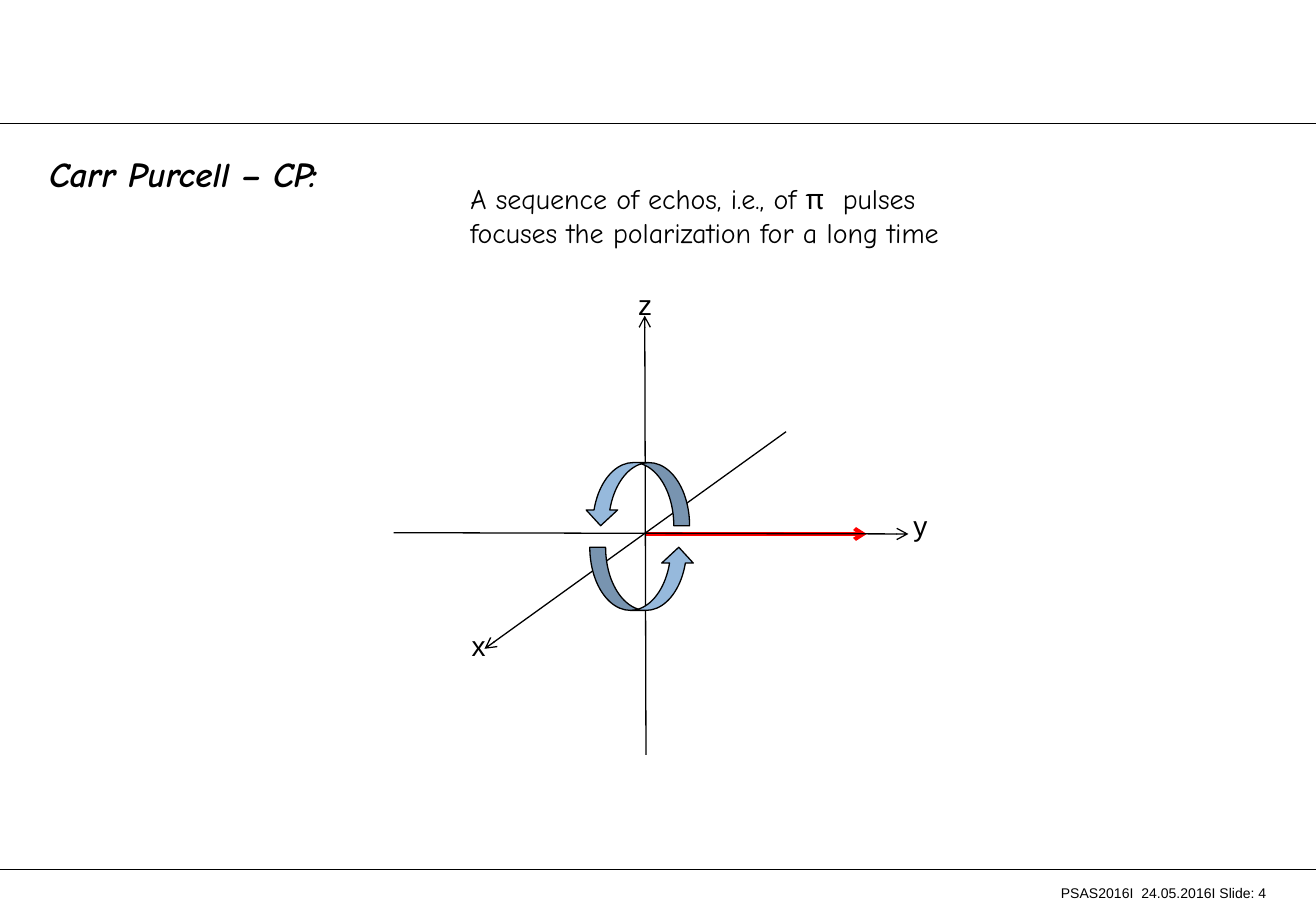
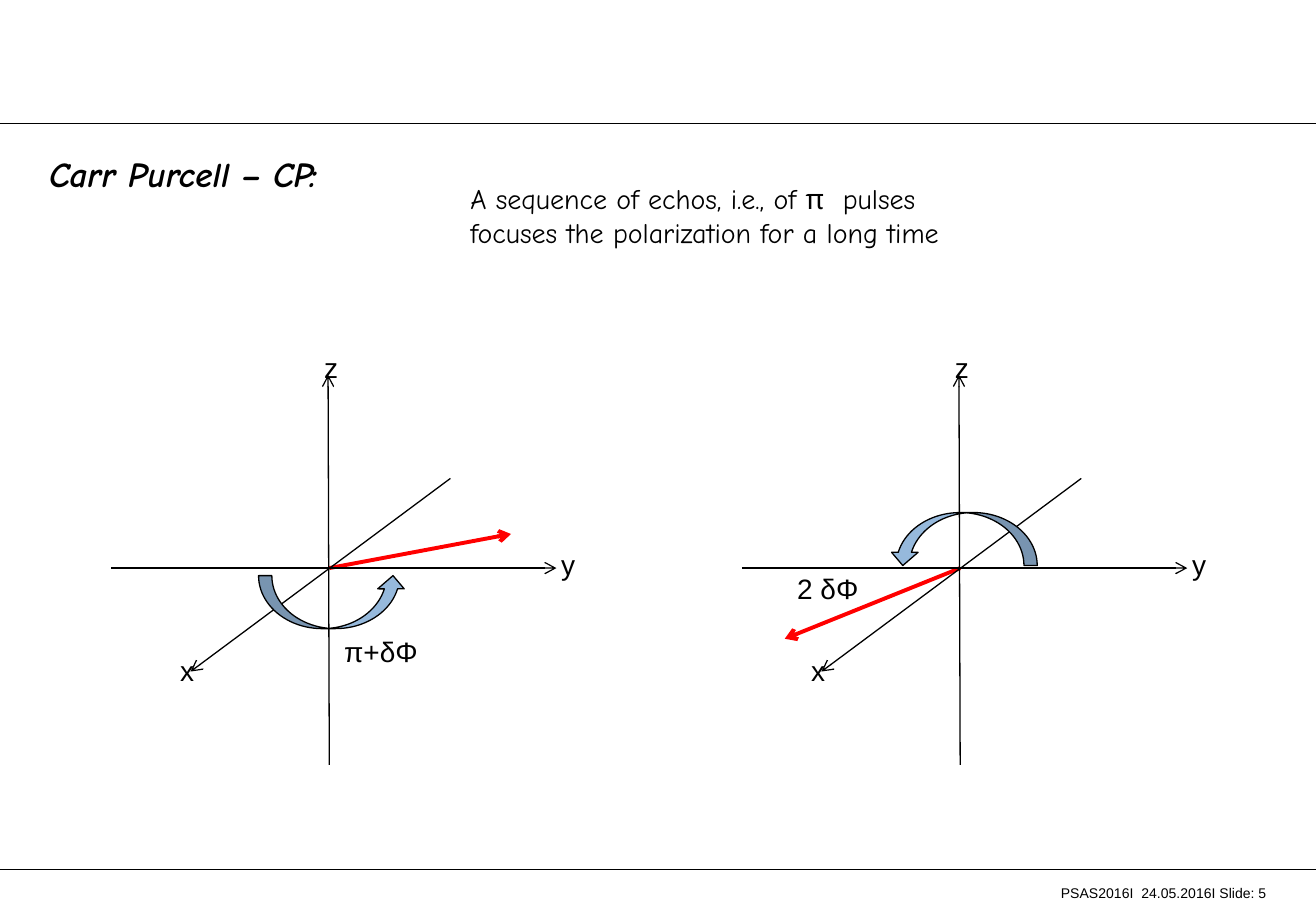
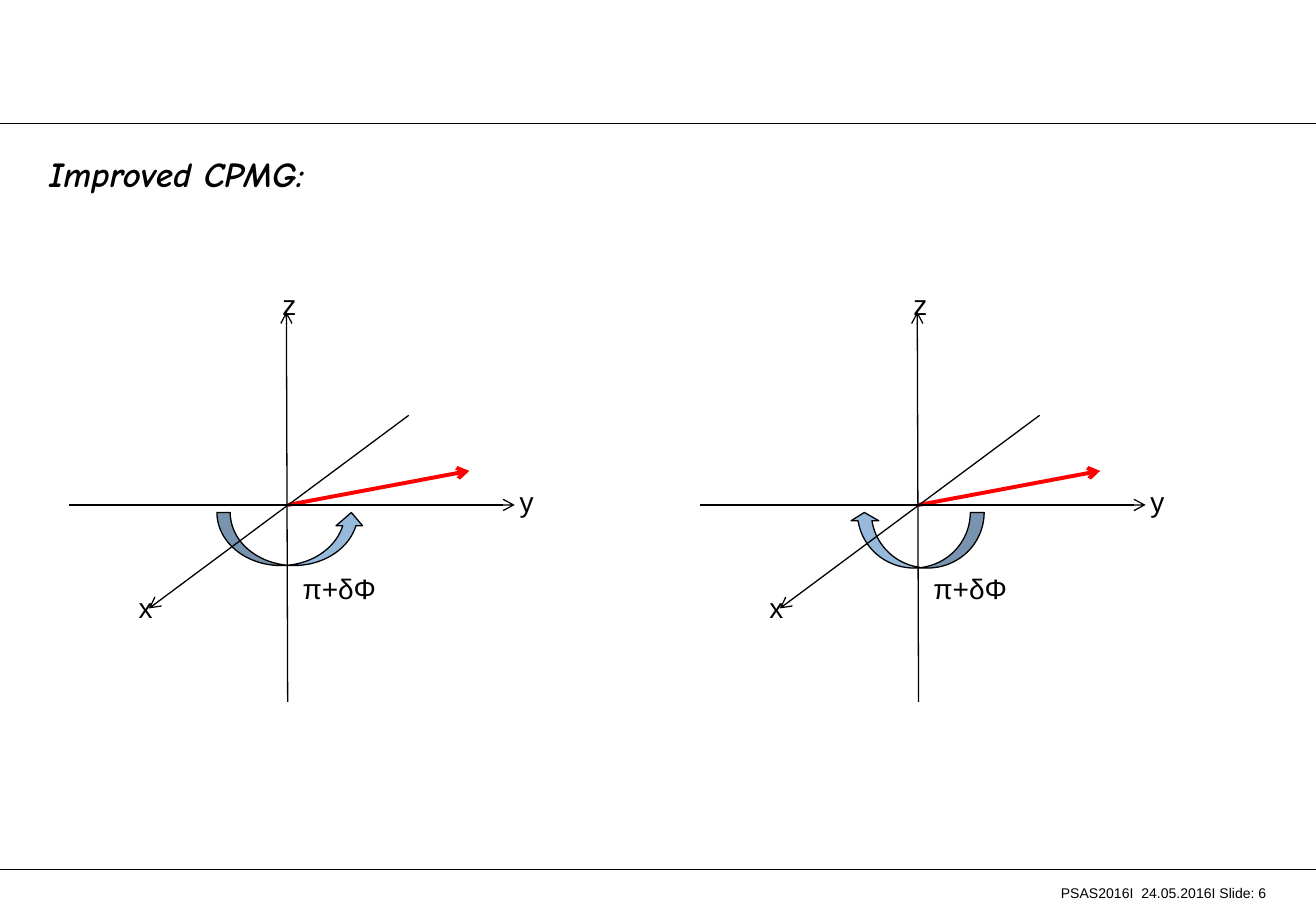
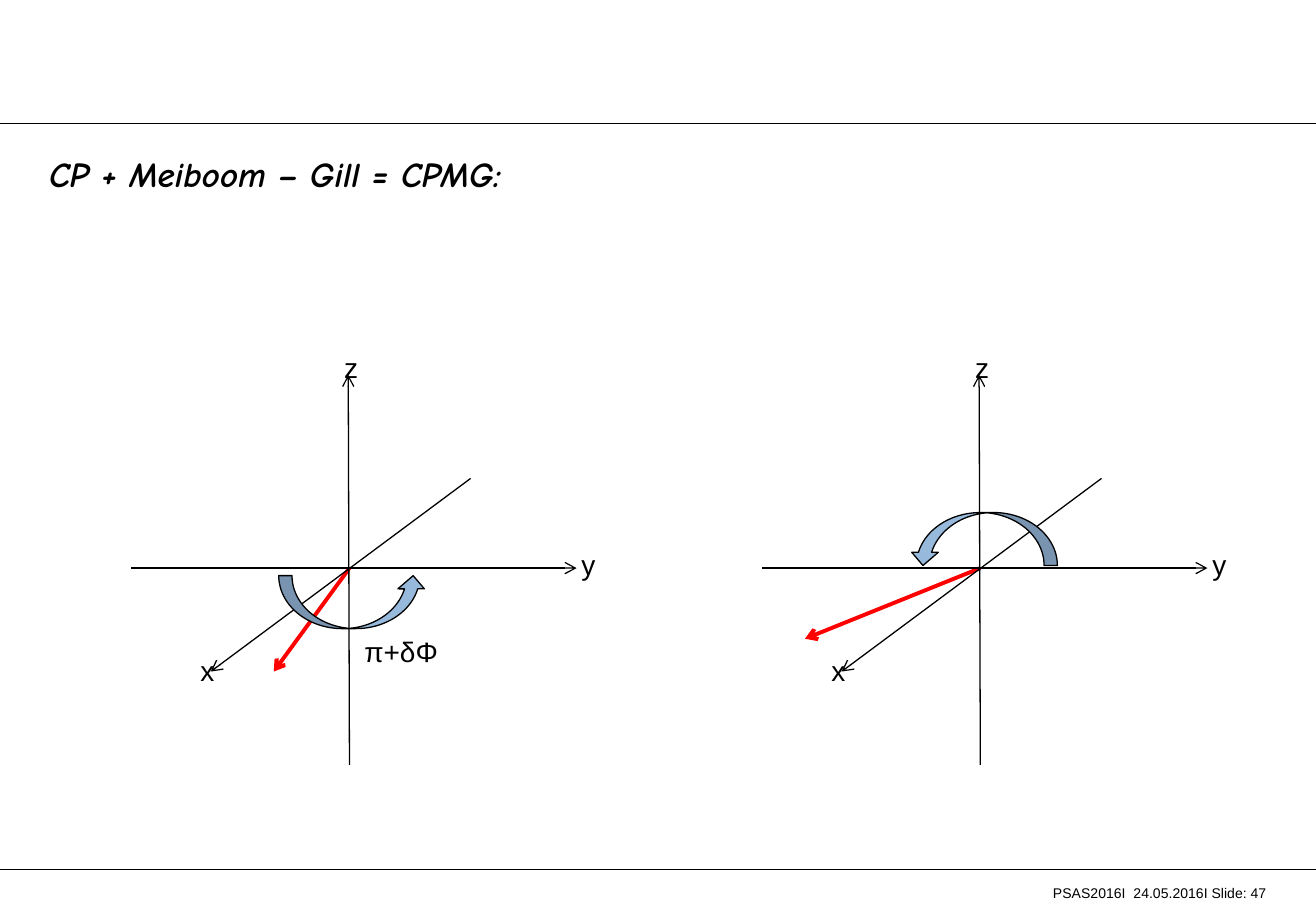
from lxml import etree
from pptx import Presentation
from pptx.dml.color import RGBColor
from pptx.enum.shapes import MSO_CONNECTOR, MSO_SHAPE
from pptx.enum.text import MSO_ANCHOR, PP_ALIGN
from pptx.oxml.ns import qn
from pptx.util import Inches, Pt

STRAIGHT = MSO_CONNECTOR.STRAIGHT
CURVED_RIGHT = MSO_SHAPE.CURVED_RIGHT_ARROW
CURVED_LEFT = MSO_SHAPE.CURVED_LEFT_ARROW
CURVED_UP = MSO_SHAPE.CURVED_UP_ARROW
LEFT, RIGHT = PP_ALIGN.LEFT, PP_ALIGN.RIGHT
TOP, MIDDLE = MSO_ANCHOR.TOP, MSO_ANCHOR.MIDDLE

BLACK, RED, BLUE = "000000", "FF0000", "96B9DC"
WIDTH, HEIGHT = 10.43, 7.28

TITLE_FONT = {"name": "Comic Neue", "size": Pt(20), "bold": True, "italic": True}
FOOTER_FONT = {"name": "Arial", "size": Pt(8)}
NOTE_FONT = {"name": "Comic Neue", "size": Pt(16)}
SYMBOL_FONT = {"name": "Noto Sans", "size": Pt(16)}
LABEL_FONT = {"name": "Arial", "size": Pt(16)}


def rgb(value):
    return RGBColor.from_string(value)


def draw_line(slide, start, end, color=BLACK, weight=0.75, arrow=True):
    line = slide.shapes.add_connector(STRAIGHT, *map(Inches, (*start, *end)))
    line.line.color.rgb = rgb(color)
    line.line.width = Pt(weight)
    if arrow:
        etree.SubElement(line.line._ln, qn("a:tailEnd"), type="arrow")
    etree.SubElement(line._element.spPr, qn("a:effectLst"))
    return line


# Axes relative to the origin: (start, end, label, label corner), x axis last
LARGE_AXES = [
    ((0, 1.75), (-0.01, -1.73), "z", (-0.16, -2)),
    ((-2, -0.01), (2.08, 0), "y", (2.02, -0.25)),
    ((1.11, -0.81), (-1.28, 0.91), "x", (-1.48, 0.7)),
]
SMALL_AXES = [
    ((0, 1.56), (-0.01, -1.53), "z", (-0.14, -1.77)),
    ((-1.73, 0), (1.8, 0), "y", (1.74, -0.21)),
    ((0.96, -0.71), (-1.1, 0.82), "x", (-1.28, 0.63)),
]

# Pulses relative to the origin: (shape, left, top, width, height, rotation)
FULL_TURN = [(CURVED_RIGHT, -0.32, -0.73, 0.5, 0.83, 90),
             (CURVED_RIGHT, -0.28, -0.06, 0.5, 0.83, 270)]
LOWER_PULSE = [(CURVED_UP, -0.56, 0.06, 1.17, 0.42, 0)]
UPPER_PULSE = [(CURVED_UP, -0.56, -0.44, 1.17, 0.42, 180)]
REVERSED_PULSE = [(CURVED_LEFT, -0.23, -0.25, 0.44, 1.06, 90)]

# Red polarization vectors relative to the origin
ALONG_Y, ABOVE_Y = (1.75, 0), (1.44, -0.27)
BEHIND, TOWARDS_X = (-1.39, 0.56), (-0.6, 0.82)

PULSE_ANGLE = ("π+δΦ", (0.02, 0.48))
DOUBLE_ERROR = ("2 δΦ", (-1.39, -0.02))
ECHO_NOTE = [("A sequence of echos, i.e., of ", NOTE_FONT),
             ("π", SYMBOL_FONT),
             ("  pulses focuses the polarization for a long time", NOTE_FONT)]

# Slides: (number, title, note, x axis in front, diagrams);
# diagram: (origin, axes, polarization, pulses, angle)
SLIDES = [
    (4, "Carr Purcell – CP:", ECHO_NOTE, False, [
        ((5.12, 4.23), LARGE_AXES, ALONG_Y, FULL_TURN, None)]),
    (5, "Carr Purcell – CP:", ECHO_NOTE, False, [
        ((2.61, 4.5), SMALL_AXES, ABOVE_Y, LOWER_PULSE, PULSE_ANGLE),
        ((7.61, 4.5), SMALL_AXES, BEHIND, UPPER_PULSE, DOUBLE_ERROR)]),
    (6, "Improved CPMG:", None, True, [
        ((2.28, 4), SMALL_AXES, ABOVE_Y, LOWER_PULSE, PULSE_ANGLE),
        ((7.28, 4), SMALL_AXES, ABOVE_Y, REVERSED_PULSE, PULSE_ANGLE)]),
    (47, "CP + Meiboom – Gill = CPMG:", None, False, [
        ((2.77, 4.5), SMALL_AXES, TOWARDS_X, LOWER_PULSE, PULSE_ANGLE),
        ((7.77, 4.5), SMALL_AXES, BEHIND, UPPER_PULSE, None)]),
]

prs = Presentation()
prs.slide_width, prs.slide_height = Inches(WIDTH), Inches(HEIGHT)
title_only = prs.slide_layouts[5]

# Shared layout: title place and the two rules
for holder in list(title_only.placeholders):
    if holder.placeholder_format.idx:
        holder._element.getparent().remove(holder._element)
    else:
        holder.left, holder.top = Inches(0.39), Inches(1.18)
        holder.width, holder.height = Inches(9.64), Inches(0.39)

for number, title, note, x_in_front, diagrams in SLIDES:
    slide = prs.slides.add_slide(title_only)
    if number == SLIDES[0][0]:
        for rule_y in (0.98, 6.89):
            rule = draw_line(slide, (0, rule_y), (WIDTH, rule_y), arrow=False)
            title_only.shapes._spTree.append(rule._element)

    # Texts: (frame, runs, alignment, anchor, margins)
    footer = slide.shapes.add_textbox(*map(Inches, (4.53, 7.01, 5.51, 0.24)))
    footer_text = f"PSAS2016I  24.05.2016I Slide: {number}"
    texts = [
        (slide.shapes.title.text_frame, [(title, TITLE_FONT)], LEFT, MIDDLE, (0, 0)),
        (footer.text_frame, [(footer_text, FOOTER_FONT)], RIGHT, TOP, (0, 0)),
    ]
    labels = []
    if note:
        labels.append((note, 3.63, 1.39, 4.33, 0.64))

    for (x, y), axes, (dx, dy), pulses, angle in diagrams:
        # Polarization and axes
        draw_line(slide, (x, y), (x + dx, y + dy), RED, 2.25)
        axis_lines = []
        for (x1, y1), (x2, y2), name, (label_x, label_y) in axes:
            axis_lines.append(draw_line(slide, (x + x1, y + y1), (x + x2, y + y2)))
            labels.append(([(name, LABEL_FONT)], x + label_x, y + label_y, 0.33, 0.37))
        if angle:
            value, (angle_x, angle_y) = angle
            labels.append(([(value, LABEL_FONT)], x + angle_x, y + angle_y, 0.83, 0.37))

        # Pulses
        for kind, left, top, width, height, rotation in pulses:
            pulse = slide.shapes.add_shape(
                kind, *map(Inches, (x + left, y + top, width, height)))
            pulse.rotation = rotation
            pulse.shadow.inherit = False
            pulse.fill.solid()
            pulse.fill.fore_color.rgb = rgb(BLUE)
            pulse.line.color.rgb = rgb(BLACK)
            pulse.line.width = Pt(0.75)
            if kind == CURVED_LEFT:
                pulse.adjustments[2] = 0.15
        if x_in_front:
            slide.shapes._spTree.append(axis_lines[-1]._element)

    for runs, *box in labels:
        label = slide.shapes.add_textbox(*map(Inches, box))
        texts.append((label.text_frame, runs, LEFT, TOP, (0.1, 0.05)))

    for frame, runs, alignment, anchor, (side, edge) in texts:
        frame.word_wrap = True
        frame.vertical_anchor = anchor
        frame.margin_left = frame.margin_right = Inches(side)
        frame.margin_top = frame.margin_bottom = Inches(edge)
        paragraph = frame.paragraphs[0]
        paragraph.alignment = alignment
        for words, font in runs:
            run = paragraph.add_run()
            run.text = words
            run.font.color.rgb = rgb(BLACK)
            for attribute, setting in font.items():
                setattr(run.font, attribute, setting)

prs.save("out.pptx")
